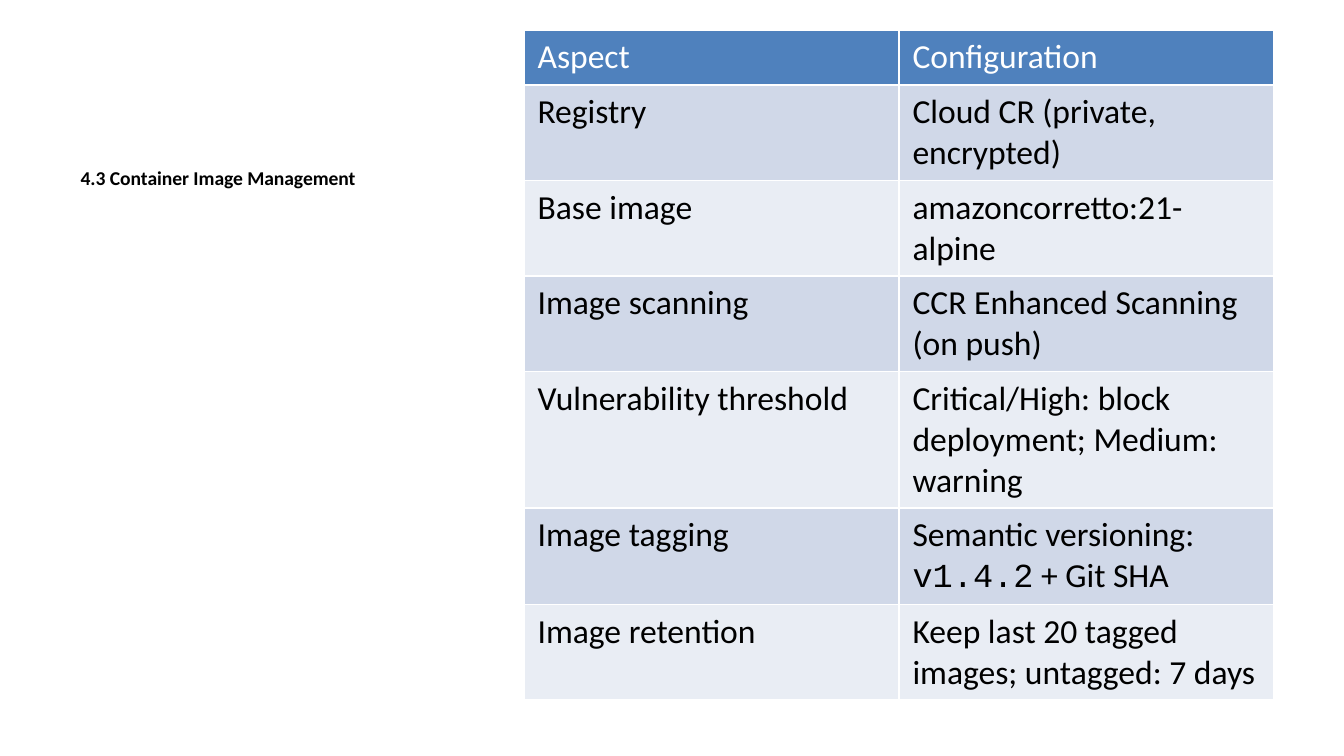
import pptx
import pptx.util
import pptx.dml.color
from dataclasses import dataclass
from typing import Any

WHITE = pptx.dml.color.RGBColor(0xFF, 0xFF, 0xFF)
BLACK = pptx.dml.color.RGBColor(0x00, 0x00, 0x00)
BLUE = pptx.dml.color.RGBColor(0x4F, 0x81, 0xBD)
BANDS = (pptx.dml.color.RGBColor(0xE9, 0xED, 0xF4),
         pptx.dml.color.RGBColor(0xD0, 0xD8, 0xE8))

WIDE = pptx.util.Inches(10)
HIGH = WIDE * 9 // 16
LINE = pptx.util.Pt(22)
PAD = pptx.util.Inches(0.1)

PLAIN = {"name": "Calibri", "size": pptx.util.Pt(18), "bold": False}
CODE = {**PLAIN, "name": "Courier New"}
HEAD = {**PLAIN, "size": pptx.util.Pt(10.5), "bold": True}


@dataclass
class Span:
    text: str
    form: dict[str, Any]


@dataclass
class Row:
    aspect: str
    setup: list[Span]
    lines: int = 2


def plain(text: str) -> list[Span]:
    return [Span(text, PLAIN)]


ROWS = [
    Row("Aspect", plain("Configuration"), 1),
    Row("Registry", plain("Cloud CR (private, encrypted)")),
    Row("Base image", plain("amazoncorretto:21-alpine")),
    Row("Image scanning", plain("CCR Enhanced Scanning (on push)")),
    Row("Vulnerability threshold",
        plain("Critical/High: block deployment; Medium: warning"), 3),
    Row("Image tagging", [Span("Semantic versioning: ", PLAIN),
                          Span("v1.4.2", CODE), Span(" + Git SHA", PLAIN)]),
    Row("Image retention",
        plain("Keep last 20 tagged images; untagged: 7 days")),
]


def write(para: Any, spans: list[Span], color: Any) -> None:
    for span in spans:
        run = para.add_run()
        run.text = span.text
        for key, value in span.form.items():
            setattr(run.font, key, value)
        run.font.color.rgb = color


def place(shape: Any, left: float, top: float, width: float,
          height: float) -> None:
    box = {"left": WIDE * left, "top": HIGH * top,
           "width": WIDE * width, "height": HIGH * height}
    for key, value in box.items():
        setattr(shape, key, int(value))


def label(slide: Any, text: str) -> None:
    for item in list(slide.placeholders):
        if item.placeholder_format.idx == 2:
            place(item, 0.05, 0.21, 0.33, 0.68)
            para = item.text_frame.paragraphs[0]
            para.space_before = pptx.util.Pt(0)
            write(para, [Span(text, HEAD)], BLACK)
        else:
            item.element.getparent().remove(item.element)


def grid(slide: Any, rows: list[Row]) -> None:
    high = sum(PAD + row.lines * LINE for row in rows)
    frame = slide.shapes.add_table(
        len(rows), 2, int(WIDE * 0.39), int(HIGH * 0.04),
        int(WIDE * 0.558), high)
    table = frame.table
    for at, row in enumerate(rows):
        table.rows[at].height = PAD + row.lines * LINE
        for col, spans in enumerate((plain(row.aspect), row.setup)):
            cell = table.cell(at, col)
            cell.fill.solid()
            cell.fill.fore_color.rgb = BANDS[at % 2] if at else BLUE
            write(cell.text_frame.paragraphs[0], spans,
                  BLACK if at else WHITE)


def main() -> None:
    deck = pptx.Presentation()
    deck.slide_width, deck.slide_height = WIDE, HIGH
    slide = deck.slides.add_slide(deck.slide_layouts[7])
    label(slide, "4.3 Container Image Management")
    grid(slide, ROWS)
    deck.save("out.pptx")


if __name__ == "__main__":
    main()
